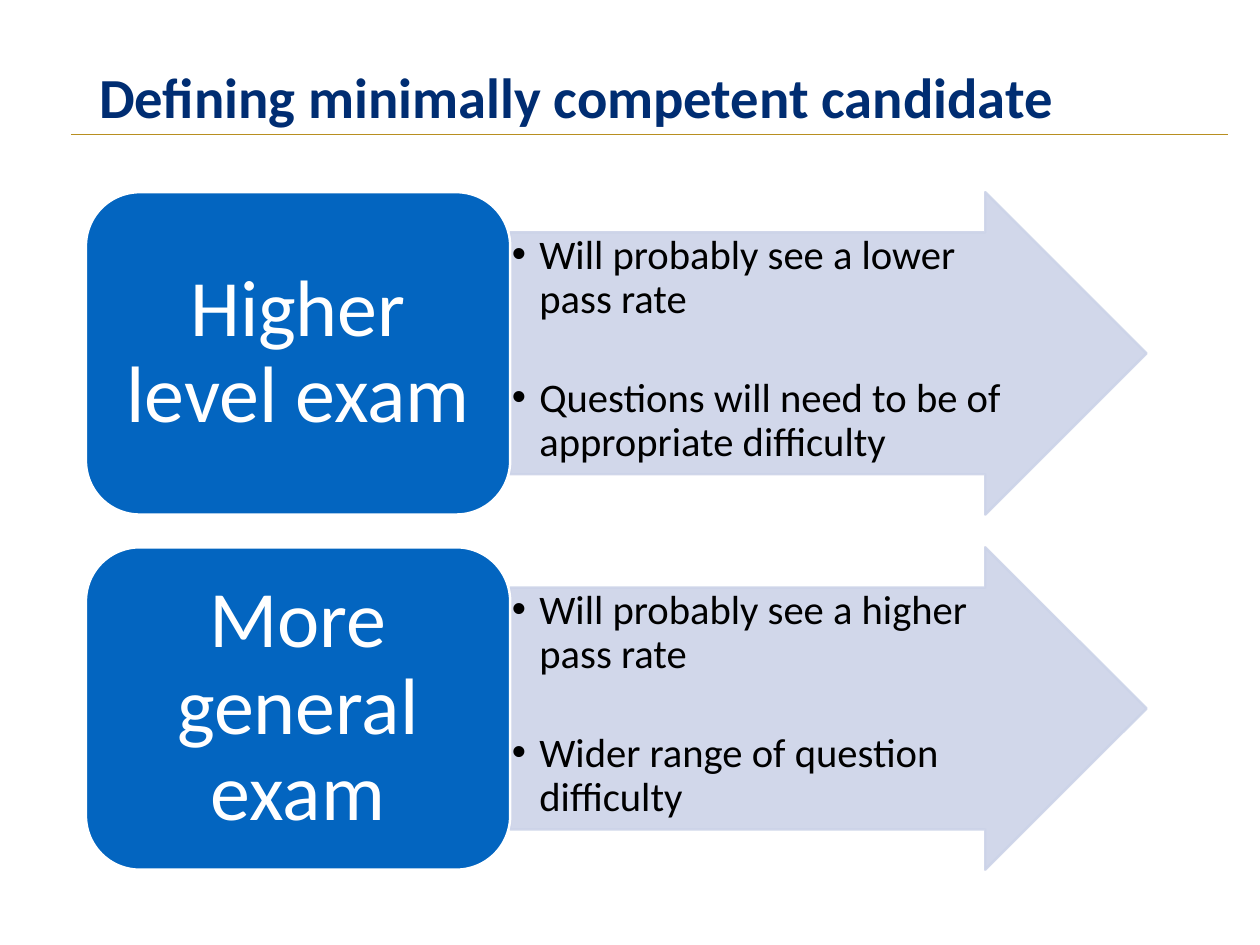
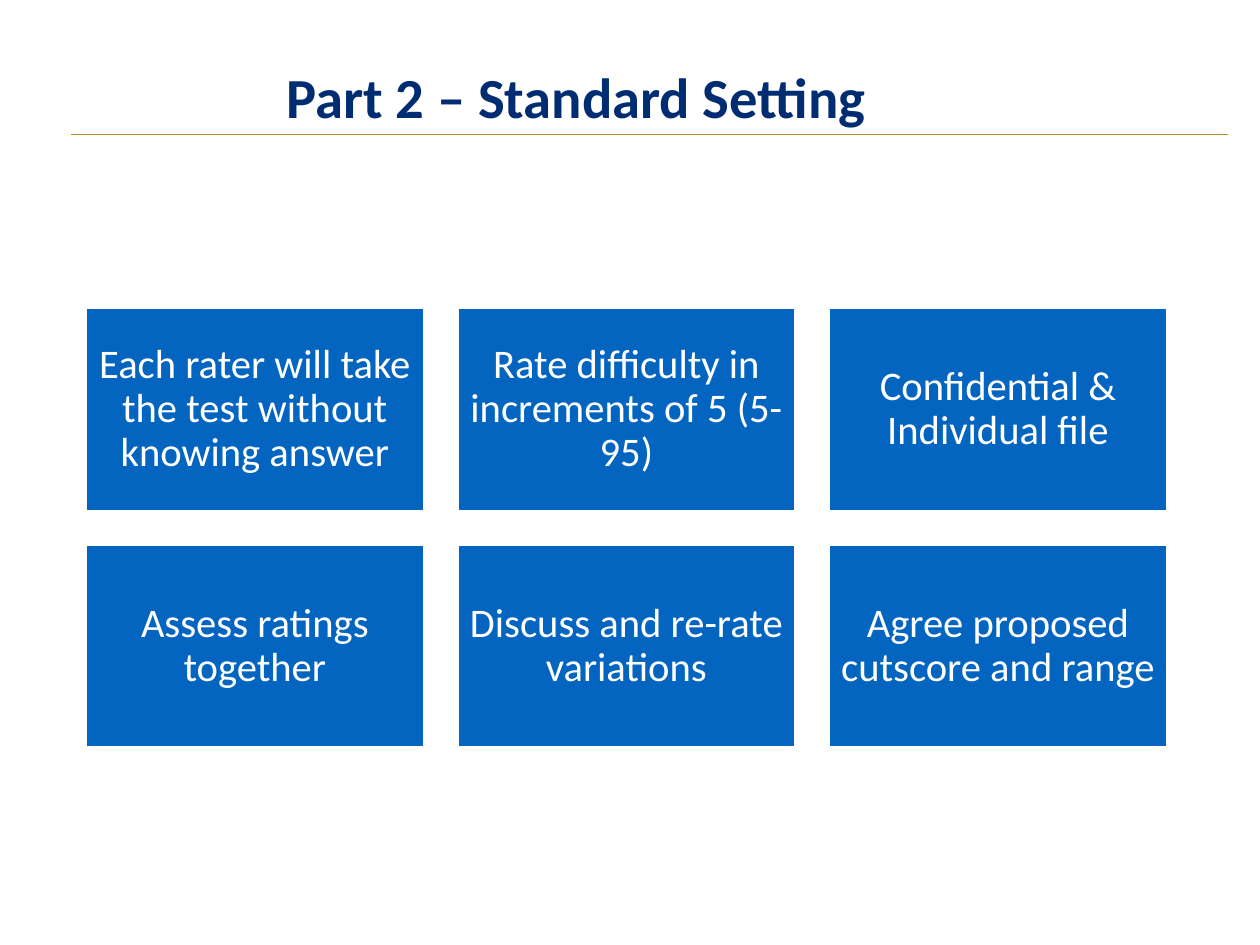
from lxml.etree import SubElement
from pptx import Presentation
from pptx.dml.color import RGBColor
from pptx.enum.shapes import MSO_CONNECTOR, MSO_SHAPE
from pptx.enum.text import MSO_ANCHOR, MSO_AUTO_SIZE, PP_ALIGN
from pptx.oxml.ns import qn
from pptx.util import Emu, Pt

PX = 9144
FONT = "Calibri"
COLORS = {
    "navy": "002D72",
    "gold": "B88F20",
    "blue": "0365C0",
    "pale": "CCD3E8",
    "white": "FFFFFF",
    "black": "000000",
}


def px(n):
    return Emu(round(n * PX))


def rgb(name):
    return RGBColor.from_string(COLORS[name])


def set_frame(tf, anchor, insets):
    tf.word_wrap = True
    tf.auto_size = MSO_AUTO_SIZE.NONE
    tf.vertical_anchor = anchor
    tf.margin_left, tf.margin_top, tf.margin_right, tf.margin_bottom = map(px, insets)


def add_run(p, text, size, color, bold=False):
    r = p.add_run()
    r.text = text
    r.font.name = FONT
    r.font.size = Pt(size)
    r.font.bold = bold
    r.font.color.rgb = rgb(color)


def add_box(s, preset, box, fill, line):
    sp = s.shapes.add_shape(preset, *map(px, box))
    sp.shadow.inherit = False
    sp.fill.solid()
    sp.fill.fore_color.rgb = rgb(fill)
    sp.line.color.rgb = rgb(line)
    sp.line.width = Pt(2)
    return sp


def add_label_box(s, preset, box, text, size, insets):
    sp = add_box(s, preset, box, "blue", "white")
    set_frame(sp.text_frame, MSO_ANCHOR.MIDDLE, insets)
    p = sp.text_frame.paragraphs[0]
    p.alignment = PP_ALIGN.CENTER
    p.line_spacing = 0.9
    add_run(p, text, size, "white")


def add_bullet_arrow(s, box, bullets):
    sp = add_box(s, MSO_SHAPE.RIGHT_ARROW, box, "pale", "pale")
    sp.adjustments[0], sp.adjustments[1] = 0.75, 0.5
    for clr in sp._element.spPr.iter(qn("a:srgbClr")):
        SubElement(clr, qn("a:alpha"), val="90000")
    tf = sp.text_frame
    set_frame(tf, MSO_ANCHOR.TOP, (2, 2, 2, 2))
    for i, text in enumerate(bullets):
        p = tf.add_paragraph() if i else tf.paragraphs[0]
        pPr = p._p.get_or_add_pPr()
        pPr.set("marL", str(px(31)))
        pPr.set("indent", str(px(-31)))
        SubElement(pPr, qn("a:buFont"), typeface="Arial")
        SubElement(pPr, qn("a:buChar"), char="•")
        p.alignment = PP_ALIGN.LEFT
        p.line_spacing = 0.9
        if i < len(bullets) - 1:
            p.space_after = Pt(45)
        add_run(p, text, 33, "black")


def add_titled_slide(prs, title):
    s = prs.slides.add_slide(prs.slide_layouts.get_by_name("Title Only"))
    rule = s.shapes.add_connector(MSO_CONNECTOR.STRAIGHT, px(80), px(152), px(1386), px(152))
    rule.line.color.rgb = rgb("gold")
    rule.line.width = Pt(1)
    SubElement(rule._element.spPr, qn("a:effectLst"))
    sp = s.shapes.title
    sp.left, sp.top, sp.width, sp.height = map(px, (78, -37, 1144, 183))
    set_frame(sp.text_frame, MSO_ANCHOR.BOTTOM, (0, 0, 0, 0))
    p = sp.text_frame.paragraphs[0]
    p.alignment = PP_ALIGN.CENTER
    p.line_spacing = 0.8
    add_run(p, title, 46, "navy", bold=True)
    return s


def add_exam_rows(s, box, rows, gap=37):
    left, top, width, height = box
    row_h = (height - gap * (len(rows) - 1)) / len(rows)
    label_w = width * 0.4
    for i, (label, bullets) in enumerate(rows):
        y = top + i * (row_h + gap)
        add_bullet_arrow(s, (left + label_w, y, width - label_w, row_h), bullets)
        add_label_box(s, MSO_SHAPE.ROUNDED_RECTANGLE, (left, y, label_w, row_h),
                      label, 65, (27, 14, 27, 14))


def add_step_grid(s, box, steps, cols=3, gap=38):
    left, top, width, height = box
    rows = len(steps) // cols
    cell_w = (width - gap * (cols - 1)) / cols
    cell_h = (height - gap * (rows - 1)) / rows
    for i, text in enumerate(steps):
        row, col = divmod(i, cols)
        cell = (left + col * (cell_w + gap), top + row * (cell_h + gap), cell_w, cell_h)
        add_label_box(s, MSO_SHAPE.RECTANGLE, cell, text, 33, (12, 14, 12, 14))


def main():
    prs = Presentation()
    prs.slide_width, prs.slide_height = px(1422), px(1067)

    s = add_titled_slide(prs, "Defining minimally competent candidate")
    add_exam_rows(s, (97, 217, 1197, 765), [
        ("Higher level exam", ["Will probably see a lower pass rate",
                               "Questions will need to be of appropriate difficulty"]),
        ("More general exam", ["Will probably see a higher pass rate",
                               "Wider range of question difficulty"]),
    ])

    s = add_titled_slide(prs, "Part 2 – Standard Setting")
    add_step_grid(s, (97, 348, 1220, 496), [
        "Each rater will take the test without knowing answer",
        "Rate difficulty in increments of 5 (5-95)",
        "Confidential & Individual file",
        "Assess ratings together",
        "Discuss and re-rate variations",
        "Agree proposed cutscore and range",
    ])

    prs.save("out.pptx")


if __name__ == "__main__":
    main()
